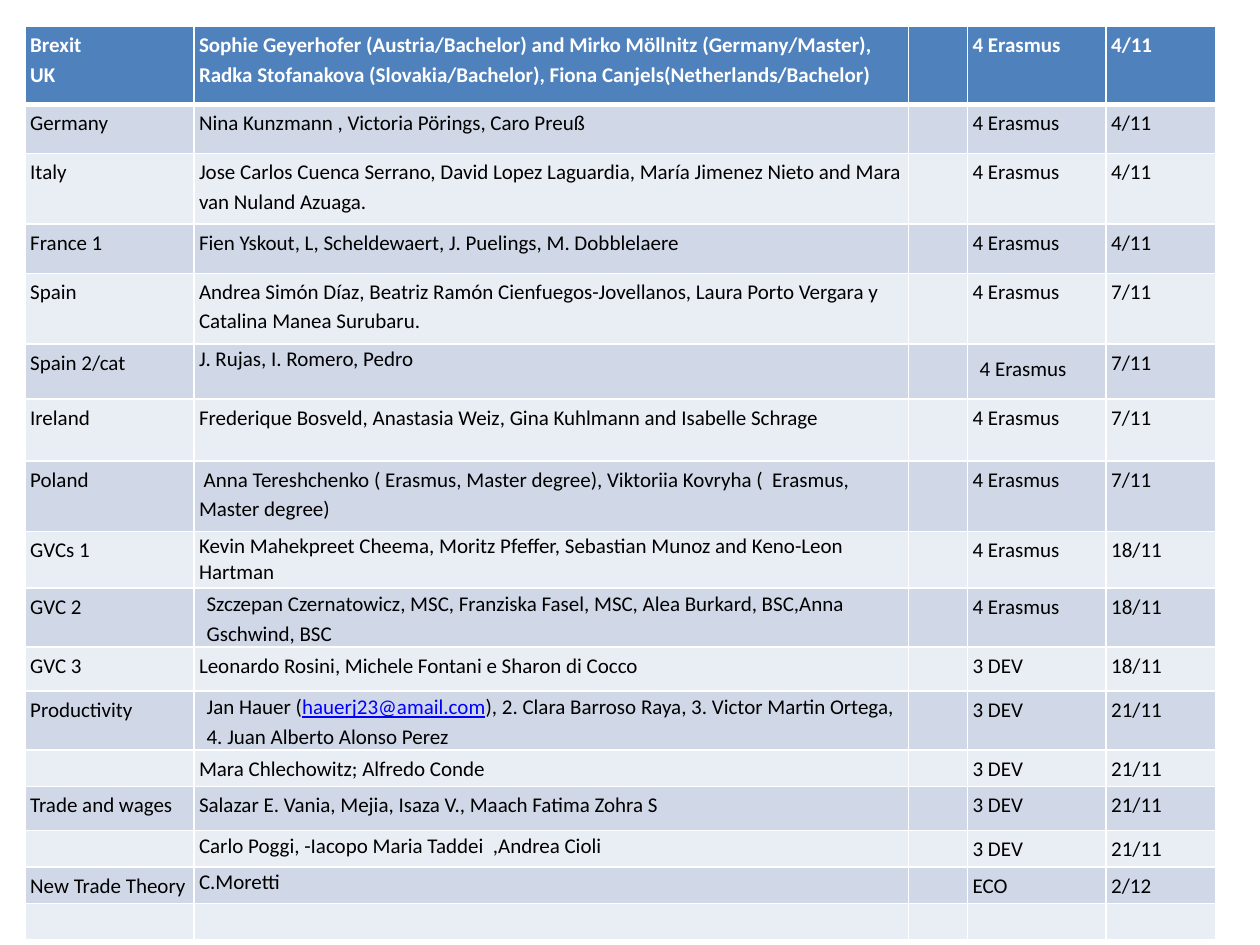
from dataclasses import dataclass

from lxml.etree import SubElement
from pptx import Presentation
from pptx.dml.color import RGBColor
from pptx.oxml.ns import qn
from pptx.util import Inches, Pt


@dataclass(frozen=True)
class Theme:
    font: str = "Calibri"
    size: int = 12
    pad_size: int = 18
    header_fill: str = "4F81BD"
    band_fills: tuple = ("E9EDF4", "D0D8E8")
    header_text: str = "FFFFFF"
    body_text: str = "000000"
    email_text: str = "0000FF"
    rule: str = "FFFFFF"
    thin: int = 1
    thick: int = 3
    spacing: float = 1.15


@dataclass(frozen=True)
class Entry:
    """Cell text that departs from the usual spacing or insets."""
    text: str
    spacing: float = Theme.spacing
    inset: tuple = (0.04, 0.02)


THEME = Theme()
WIDE = (0.1, 0)
EMAIL = "hauerj23@amail.com"
PADDED_COURSE = " 4 Erasmus "
COLUMN_WIDTHS = (1.34, 5.67, 0.47, 1.1, 0.87)

# Row height, topic, students, course, date
SCHEDULE = [
    (0.62, "Brexit\nUK",
     "Sophie Geyerhofer (Austria/Bachelor) and Mirko Möllnitz (Germany/Master), "
     "Radka Stofanakova (Slovakia/Bachelor), Fiona Canjels(Netherlands/Bachelor)",
     "4 Erasmus", "4/11"),
    (0.39, "Germany", "Nina Kunzmann , Victoria Pörings, Caro Preuß", "4 Erasmus", "4/11"),
    (0.56, "Italy",
     "Jose Carlos Cuenca Serrano, David Lopez Laguardia, María Jimenez Nieto and Mara "
     "van Nuland Azuaga.", "4 Erasmus", "4/11"),
    (0.39, "France 1", "Fien Yskout, L, Scheldewaert, J. Puelings, M. Dobblelaere",
     "4 Erasmus", "4/11"),
    (0.56, "Spain",
     "Andrea Simón Díaz, Beatriz Ramón Cienfuegos-Jovellanos, Laura Porto Vergara y "
     "Catalina Manea Surubaru.", "4 Erasmus", "7/11"),
    (0.44, "Spain 2/cat", Entry("J. Rujas, I. Romero, Pedro", 1),
     Entry(PADDED_COURSE, 1), "7/11"),
    (0.49, "Ireland",
     "Frederique Bosveld, Anastasia Weiz, Gina Kuhlmann and Isabelle Schrage",
     "4 Erasmus", "7/11"),
    (0.56, "Poland",
     " Anna Tereshchenko ( Erasmus, Master degree), Viktoriia Kovryha (  Erasmus, "
     "Master degree)", "4 Erasmus", "7/11"),
    (0.45, "GVCs 1",
     Entry("Kevin Mahekpreet Cheema, Moritz Pfeffer, Sebastian Munoz and Keno-Leon Hartman", 1),
     "4 Erasmus", "18/11"),
    (0.46, "GVC 2",
     Entry("Szczepan Czernatowicz, MSC, Franziska Fasel, MSC, Alea Burkard, BSC,Anna "
           "Gschwind, BSC", inset=WIDE), "4 Erasmus", "18/11"),
    (0.35, "GVC 3", "Leonardo Rosini, Michele Fontani e Sharon di Cocco", "3 DEV", "18/11"),
    (0.46, "Productivity",
     Entry(f"Jan Hauer ({EMAIL}), 2. Clara Barroso Raya, 3. Victor Martin Ortega, "
           "4. Juan Alberto Alonso Perez", inset=WIDE), "3 DEV", "21/11"),
    (0.29, "", "Mara Chlechowitz; Alfredo Conde", "3 DEV", "21/11"),
    (0.35, "Trade and wages", "Salazar E. Vania, Mejia, Isaza V., Maach Fatima Zohra S",
     "3 DEV", "21/11"),
    (0.29, "", Entry("Carlo Poggi, -Iacopo Maria Taddei  ,Andrea Cioli", 1), "3 DEV", "21/11"),
    (0.29, "New Trade Theory", Entry("C.Moretti", 1), "ECO", "2/12"),
    (0.29, "", "", "", ""),
]


def color(value):
    return RGBColor.from_string(value)


def format_run(run, text_color, bold):
    run.font.name = THEME.font
    run.font.size = Pt(THEME.size)
    run.font.bold = bold
    run.font.color.rgb = color(text_color)


def split_runs(paragraph, part):
    """Divide a one-run paragraph into the runs before, at and after the part."""
    pieces = paragraph.text.partition(part)
    paragraph.text = pieces[0]
    for piece in pieces[1:]:
        paragraph.add_run().text = piece


def set_borders(cell, row):
    widths = {
        "L": THEME.thin,
        "R": THEME.thin,
        "T": THEME.thick if row == 1 else THEME.thin,
        "B": THEME.thick if row == 0 else THEME.thin,
    }
    properties = cell._tc.get_or_add_tcPr()
    for side, width in widths.items():
        line = SubElement(properties, qn(f"a:ln{side}"), w=str(Pt(width)))
        fill = SubElement(line, qn("a:solidFill"))
        SubElement(fill, qn("a:srgbClr"), val=THEME.rule)


def style_cell(cell, row):
    set_borders(cell, row)
    cell.fill.solid()
    fill = THEME.band_fills[row % 2] if row else THEME.header_fill
    cell.fill.fore_color.rgb = color(fill)


def write_entry(cell, entry, header):
    cell.margin_left = cell.margin_right = Inches(entry.inset[0])
    cell.margin_top = cell.margin_bottom = Inches(entry.inset[1])
    cell.text_frame.text = entry.text
    text_color = THEME.header_text if header else THEME.body_text
    for paragraph in cell.text_frame.paragraphs:
        paragraph.line_spacing = entry.spacing
        if EMAIL in entry.text:
            split_runs(paragraph, EMAIL)
        elif entry.text == PADDED_COURSE:
            split_runs(paragraph, entry.text.strip())
        for run in paragraph.runs:
            format_run(run, text_color, header)
            if run.text == EMAIL:
                run.font.underline = True
                run.font.color.rgb = color(THEME.email_text)
            elif run.text == " ":
                run.font.size = Pt(THEME.pad_size)
        if not paragraph.runs:
            # Keeps an empty cell from stretching its row
            SubElement(paragraph._p, qn("a:endParaRPr"), sz=str(THEME.size * 100))


def add_schedule(slide):
    height = sum(record[0] for record in SCHEDULE)
    table = slide.shapes.add_table(
        len(SCHEDULE), len(COLUMN_WIDTHS), Inches(0.2), Inches(0.21),
        Inches(sum(COLUMN_WIDTHS)), Inches(height)).table
    for column, width in zip(table.columns, COLUMN_WIDTHS):
        column.width = Inches(width)
    for row, (row_height, topic, students, course, date) in enumerate(SCHEDULE):
        table.rows[row].height = Inches(row_height)
        for column, content in enumerate((topic, students, "", course, date)):
            cell = table.cell(row, column)
            style_cell(cell, row)
            entry = content if isinstance(content, Entry) else Entry(content)
            write_entry(cell, entry, header=row == 0)


def main():
    presentation = Presentation()
    presentation.slide_width = Inches(10)
    presentation.slide_height = Inches(7.5)
    slide = presentation.slides.add_slide(presentation.slide_layouts[6])
    add_schedule(slide)
    presentation.save("out.pptx")


if __name__ == "__main__":
    main()
